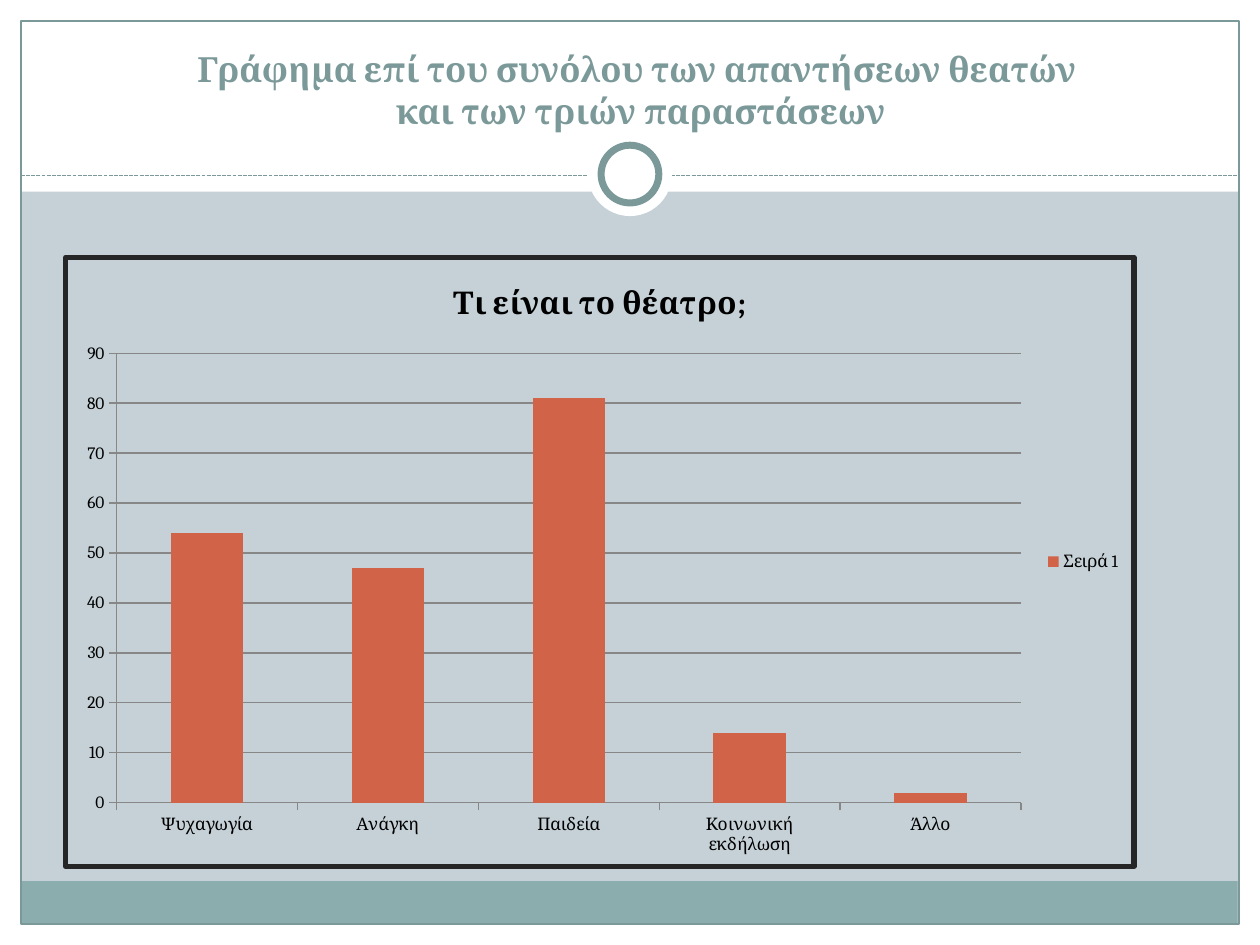
"""Build a slide with a column chart of what theatre means to its audience."""
from lxml.etree import SubElement
from pptx import Presentation
from pptx.chart.data import CategoryChartData
from pptx.dml.color import RGBColor
from pptx.enum.chart import XL_CHART_TYPE, XL_LEGEND_POSITION, XL_TICK_MARK
from pptx.enum.dml import MSO_LINE
from pptx.enum.shapes import MSO_CONNECTOR, MSO_SHAPE
from pptx.enum.text import MSO_ANCHOR, PP_ALIGN
from pptx.oxml import parse_xml
from pptx.oxml.ns import qn
from pptx.util import Pt

COLORS = {
    "background": "C5D1D7",
    "white": "FFFFFF",
    "footer": "8CADAE",
    "accent": "7C999A",
    "bar": "D16349",
    "border": "262626",
    "grid": "878787",
    "black": "000000",
}
FONT = "Cambria"


def color(name):
    return RGBColor.from_string(COLORS[name])


def write_lines(frame, text, *, size, fill, bold=False):
    para = frame.paragraphs[0]
    para.alignment = PP_ALIGN.CENTER
    for index, line in enumerate(text.splitlines()):
        if index:
            para.add_line_break()
        span = para.add_run()
        span.text = line
        span.font.name = FONT
        span.font.size = Pt(size)
        span.font.bold = bold
        span.font.color.rgb = color(fill)


deck = Presentation()
deck.slide_width, deck.slide_height = Pt(720), Pt(540)
page = deck.slides.add_slide(deck.slide_layouts[6])
page.background.fill.solid()
page.background.fill.fore_color.rgb = color("background")

bands = [
    (0, 528, 720, 12, "white"),
    (0, 0, 720, 109.5, "white"),
    (0, 0, 12, 540, "white"),
    (708, 0, 12, 540, "white"),
    (11.75, 503.5, 695.5, 24.5, "footer"),
]
for left, top, width, height, fill in bands:
    band = page.shapes.add_shape(MSO_SHAPE.RECTANGLE, Pt(left), Pt(top), Pt(width), Pt(height))
    band.shadow.inherit = False
    band.fill.solid()
    band.fill.fore_color.rgb = color(fill)
    band.line.fill.background()

frame = page.shapes.add_shape(MSO_SHAPE.RECTANGLE, Pt(12), Pt(12), Pt(696), Pt(516))
frame.shadow.inherit = False
frame.fill.background()
frame.line.color.rgb = color("accent")
frame.line.width = Pt(0.75)

divider = page.shapes.add_connector(MSO_CONNECTOR.STRAIGHT, Pt(12), Pt(100.5), Pt(708), Pt(100.5))
divider.line.color.rgb = color("accent")
divider.line.width = Pt(0.75)
divider.line.dash_style = MSO_LINE.SQUARE_DOT
SubElement(divider._element.spPr, qn("a:effectLst"))

for diameter, outlined in [(48, False), (33, True)]:
    circle = page.shapes.add_shape(
        MSO_SHAPE.OVAL, Pt(360 - diameter / 2), Pt(99.5 - diameter / 2), Pt(diameter), Pt(diameter)
    )
    circle.shadow.inherit = False
    circle.fill.solid()
    circle.fill.fore_color.rgb = color("white")
    if outlined:
        circle.line.color.rgb = color("accent")
        circle.line.width = Pt(4)
    else:
        circle.line.fill.background()

heading = page.shapes.add_textbox(Pt(67.5), Pt(22.5), Pt(597), Pt(56)).text_frame
heading.word_wrap = True
heading.vertical_anchor = MSO_ANCHOR.BOTTOM
heading_text = """Γράφημα επί του συνόλου των απαντήσεων θεατών 
και των τριών παραστάσεων"""
write_lines(heading, heading_text, size=19.8, fill="accent", bold=True)

answers = CategoryChartData()
answers.categories = ["Ψυχαγωγία", "Ανάγκη", "Παιδεία", "Κοινωνική εκδήλωση", "Άλλο"]
answers.add_series("Σειρά 1", [54, 47, 81, 14, 2])
chart = page.shapes.add_chart(
    XL_CHART_TYPE.COLUMN_CLUSTERED, Pt(36), Pt(145.5), Pt(613.5), Pt(351), answers
).chart
chart.font.name = FONT
chart.font.size = Pt(10)
chart.font.color.rgb = color("black")
chart.has_title = True
write_lines(chart.chart_title.text_frame, "Τι είναι το θέατρο;", size=18, fill="black", bold=True)
chart.chart_title.include_in_layout = False
chart.has_legend = True
chart.legend.position = XL_LEGEND_POSITION.RIGHT
chart.legend.include_in_layout = False

plot = chart.plots[0]
plot.gap_width = 150
plot.vary_by_categories = False
bars = plot.series[0].format.fill
bars.solid()
bars.fore_color.rgb = color("bar")

chart.value_axis.minimum_scale = 0
chart.value_axis.maximum_scale = 90
chart.value_axis.major_unit = 10
chart.value_axis.has_major_gridlines = True
for axis in (chart.category_axis, chart.value_axis):
    axis.major_tick_mark = XL_TICK_MARK.OUTSIDE
    axis.format.line.color.rgb = color("grid")
    axis.format.line.width = Pt(0.75)
gridlines = chart.value_axis.major_gridlines.format.line
gridlines.color.rgb = color("grid")
gridlines.width = Pt(0.75)

chart_border = parse_xml(
    '<c:spPr xmlns:c="http://schemas.openxmlformats.org/drawingml/2006/chart"'
    ' xmlns:a="http://schemas.openxmlformats.org/drawingml/2006/main">'
    f'<a:noFill/><a:ln w="{Pt(3)}"><a:solidFill><a:srgbClr val="{COLORS["border"]}"/></a:solidFill>'
    "<a:round/></a:ln></c:spPr>"
)
chart._chartSpace.find(qn("c:txPr")).addprevious(chart_border)

deck.save("out.pptx")
